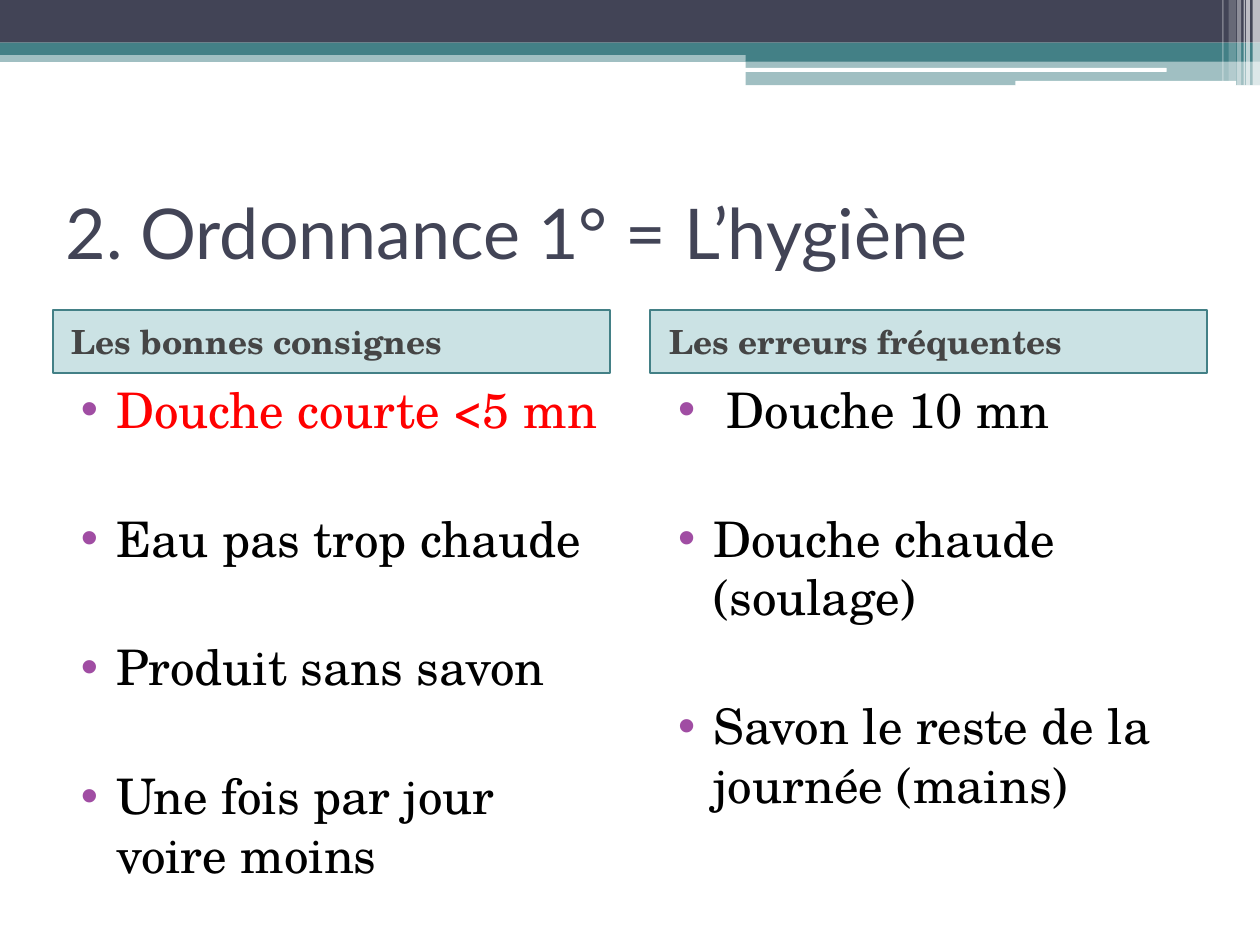
from dataclasses import dataclass

from lxml import etree
from pptx import Presentation
from pptx.dml.color import RGBColor
from pptx.enum import shapes, text
from pptx.oxml import ns
from pptx.util import Cm, Pt

NAVY = RGBColor(0x42, 0x44, 0x56)
TEAL = RGBColor(0x43, 0x80, 0x86)
HEADER_FILL = RGBColor(0x32, 0x8E, 0x97)
HEADER_TEXT = RGBColor(0x45, 0x45, 0x45)
PURPLE = RGBColor(0xA0, 0x4D, 0xA3)
RED = RGBColor(0xFF, 0x00, 0x00)
BLACK = RGBColor(0x00, 0x00, 0x00)
WHITE = RGBColor(0xFF, 0xFF, 0xFF)
TITLE_FONT = "Lato"
BODY_FONT = "TeX Gyre Schola"

RECT = shapes.MSO_SHAPE.RECTANGLE
ROUNDED = shapes.MSO_SHAPE.ROUNDED_RECTANGLE

COLUMN_WIDTH = 11.23
HEADER_TOP, HEADER_HEIGHT = 6.25, 1.27
LIST_HEIGHT = 10.8
ITEM_GAP = Pt(40)


@dataclass
class Band:
    """Bare rectangle of the banner; lengths in cm, opacity in percent."""
    left: float
    top: float
    width: float
    height: float
    color: RGBColor
    opacity: int = 100
    kind: shapes.MSO_SHAPE = RECT


@dataclass
class Column:
    left: float
    heading: str
    items: list[str]
    first_color: RGBColor = BLACK


BANNER = [
    Band(0, 1.02, 25.4, 0.23, TEAL, 50),
    Band(0, 0, 25.4, 0.86, NAVY),
    Band(0, 0.86, 25.4, 0.25, TEAL),
    Band(15.03, 0.99, 10.37, 0.25, TEAL),
    Band(15.03, 1.22, 10.37, 0.5, TEAL, 50),
    Band(15.01, 1.37, 8.51, 0.08, WHITE, kind=ROUNDED),
    Band(20.47, 1.63, 4.45, 0.1, WHITE, kind=ROUNDED),
    Band(25.25, 0, 0.15, 1.73, WHITE, 65),
    Band(25.12, 0, 0.08, 1.73, WHITE, 65),
    Band(25.07, 0, 0.03, 1.73, WHITE, 60),
    Band(24.94, 0, 0.08, 1.73, WHITE, 40),
    Band(24.77, 0, 0.15, 1.63, WHITE, 20),
    Band(24.64, 0, 0.03, 1.63, WHITE, 30),
]

COLUMNS = [
    Column(1.07, "Les bonnes consignes",
           ["Douche courte <5 mn", "Eau pas trop chaude",
            "Produit sans savon", "Une fois par jour voire moins"], RED),
    Column(13.11, "Les erreurs fréquentes",
           [" Douche 10 mn", "Douche chaude (soulage)",
            "Savon le reste de la journée (mains)"]),
]


def draw_band(slide, band: Band):
    sp = slide.shapes.add_shape(band.kind, Cm(band.left), Cm(band.top),
                                Cm(band.width), Cm(band.height))
    sp.shadow.inherit = False
    sp.line.fill.background()
    sp.fill.solid()
    sp.fill.fore_color.rgb = band.color
    if band.opacity < 100:
        color = sp.fill._xPr.find(ns.qn("a:solidFill"))[0]
        etree.SubElement(color, ns.qn("a:alpha"), val=str(band.opacity * 1000))
    return sp


def style_runs(p, font: str, size: int, color: RGBColor, bold: bool = False) -> None:
    for r in p.runs:
        r.font.name = font
        r.font.size = Pt(size)
        r.font.color.rgb = color
        r.font.bold = bold


def set_indent(p, margin: float, hanging: float = 0) -> None:
    pPr = p._p.get_or_add_pPr()
    pPr.set("marL", str(Cm(margin)))
    pPr.set("indent", str(-Cm(hanging)))


def add_bullet(p) -> None:
    pPr = p._p.get_or_add_pPr()
    bu_color = etree.SubElement(pPr, ns.qn("a:buClr"))
    etree.SubElement(bu_color, ns.qn("a:srgbClr"), val=str(PURPLE))
    etree.SubElement(pPr, ns.qn("a:buFont"), typeface="Arial")
    etree.SubElement(pPr, ns.qn("a:buChar"), char="•")


def draw_title(slide, wording: str) -> None:
    title = slide.shapes.title
    title.left, title.top = Cm(1.07), Cm(3.18)
    title.width, title.height = Cm(23.29), Cm(2.97)
    tf = title.text_frame
    tf.text = wording
    tf.auto_size = text.MSO_AUTO_SIZE.NONE
    tf.vertical_anchor = text.MSO_ANCHOR.MIDDLE
    p = tf.paragraphs[0]
    p.alignment = text.PP_ALIGN.LEFT
    style_runs(p, TITLE_FONT, 40, NAVY)


def draw_heading(slide, column: Column) -> None:
    sp = draw_band(slide, Band(column.left, HEADER_TOP, COLUMN_WIDTH,
                               HEADER_HEIGHT, HEADER_FILL, 25))
    sp.line.color.rgb = TEAL
    sp.line.width = Pt(1)
    tf = sp.text_frame
    tf.text = column.heading
    tf.vertical_anchor = text.MSO_ANCHOR.MIDDLE
    p = tf.paragraphs[0]
    p.alignment = text.PP_ALIGN.LEFT
    p.space_before = Pt(3)
    set_indent(p, 0.13)
    style_runs(p, BODY_FONT, 19, HEADER_TEXT, bold=True)


def draw_list(slide, column: Column) -> None:
    box = slide.shapes.add_textbox(Cm(column.left), Cm(HEADER_TOP + HEADER_HEIGHT),
                                   Cm(COLUMN_WIDTH), Cm(LIST_HEIGHT))
    tf = box.text_frame
    tf.word_wrap = True
    for i, item in enumerate(column.items):
        p = tf.add_paragraph() if i else tf.paragraphs[0]
        p.text = item
        p.space_before = ITEM_GAP if i else Pt(3)
        set_indent(p, 1.02, 0.71)
        add_bullet(p)
        style_runs(p, BODY_FONT, 28, BLACK if i else column.first_color)


def main() -> None:
    prs = Presentation()
    prs.slide_width, prs.slide_height = Cm(25.4), Cm(19.05)
    slide = prs.slides.add_slide(prs.slide_layouts[5])
    for band in BANNER:
        draw_band(slide, band)
    draw_title(slide, "2. Ordonnance 1° = L’hygiène")
    for column in COLUMNS:
        draw_heading(slide, column)
        draw_list(slide, column)
    prs.save("out.pptx")


if __name__ == "__main__":
    main()
